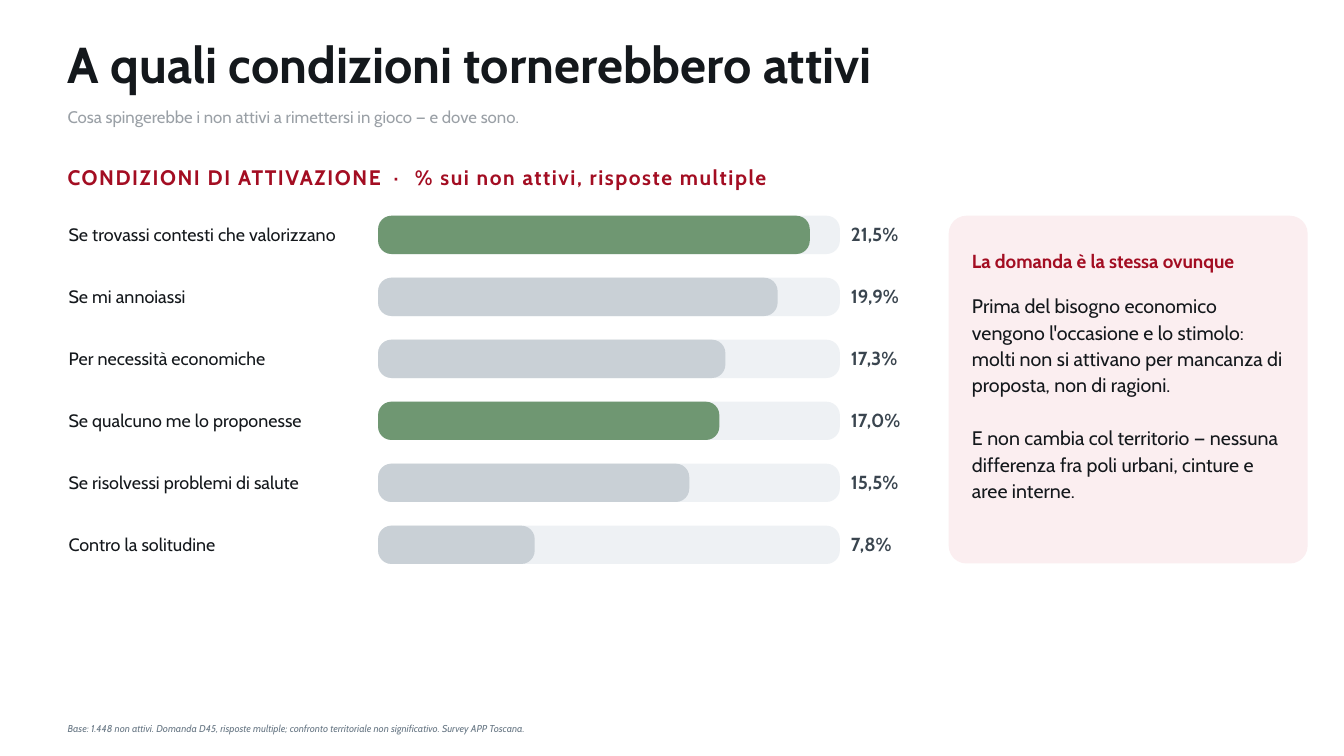
from pptx import Presentation
from pptx.dml.color import RGBColor
from pptx.enum.shapes import MSO_SHAPE
from pptx.enum.text import MSO_ANCHOR, MSO_AUTO_SIZE, PP_ALIGN
from pptx.util import Inches, Pt

FONT = "Cabin"
INK, RED, SLATE = "14181C", "A30D22", "3A454F"
GREEN, GREY, TRACK = "6F9772", "C9D0D6", "EEF1F4"

BAR_X, BAR_W, BAR_H = 3.75, 4.58, 0.38
FIRST_Y, ROW_STEP = 2.14, 0.615
SCALE_MAX = 23

CONDITIONS = [
    ("Se trovassi contesti che valorizzano", 21.5, GREEN),
    ("Se mi annoiassi", 19.9, GREY),
    ("Per necessità economiche", 17.3, GREY),
    ("Se qualcuno me lo proponesse", 17.0, GREEN),
    ("Se risolvessi problemi di salute", 15.5, GREY),
    ("Contro la solitudine", 7.8, GREY),
]


def rgb(value):
    return RGBColor.from_string(value)


def prepare_frame(shape, anchor=MSO_ANCHOR.MIDDLE):
    tf = shape.text_frame
    tf.word_wrap = True
    tf.auto_size = MSO_AUTO_SIZE.NONE
    tf.vertical_anchor = anchor
    tf.margin_left = tf.margin_top = tf.margin_right = tf.margin_bottom = 0
    return tf


def add_run(p, text, size, color, bold=False, italic=False, tracking=None):
    """Append a run; tracking is the letter spacing in points."""
    r = p.add_run()
    r.text = text
    r.font.name = FONT
    r.font.size = Pt(size)
    r.font.bold = bold
    r.font.italic = italic
    r.font.color.rgb = rgb(color)
    if tracking:
        r._r.get_or_add_rPr().set("spc", str(round(tracking * 100)))


def add_box(s, x, y, w, h, anchor=MSO_ANCHOR.MIDDLE):
    box = s.shapes.add_textbox(Inches(x), Inches(y), Inches(w), Inches(h))
    return prepare_frame(box, anchor)


def add_line(s, x, y, w, h, text, size, color, spacing=None, **style):
    p = add_box(s, x, y, w, h).paragraphs[0]
    p.line_spacing = spacing
    add_run(p, text, size, color, **style)


def add_rounded(s, x, y, w, h, color, corner):
    sp = s.shapes.add_shape(MSO_SHAPE.ROUNDED_RECTANGLE,
                            Inches(x), Inches(y), Inches(w), Inches(h))
    sp.adjustments[0] = corner
    sp.shadow.inherit = False
    sp.fill.solid()
    sp.fill.fore_color.rgb = rgb(color)
    sp.line.fill.background()


def add_title(s, text):
    title = s.shapes.title
    title.left, title.top = Inches(0.67), Inches(0.36)
    title.width, title.height = Inches(12), Inches(0.54)
    p = prepare_frame(title).paragraphs[0]
    p.alignment = PP_ALIGN.LEFT
    add_run(p, text, 36, INK, bold=True)


def add_section_heading(s):
    p = add_box(s, 0.67, 1.53, 9.49, 0.45).paragraphs[0]
    for text, tracking in [("CONDIZIONI DI ATTIVAZIONE", 1.1), (" · ", 4.2),
                           ("% sui non attivi, risposte multiple", 1.1)]:
        add_run(p, text, 15, RED, bold=True, tracking=tracking)


def add_condition(s, y, label, value, color):
    add_line(s, 0.68, y + 0.08, 3, 0.21, label, 12.8, INK)
    add_rounded(s, BAR_X, y, BAR_W, BAR_H, TRACK, 0.35)
    add_rounded(s, BAR_X, y, BAR_W * value / SCALE_MAX, BAR_H, color, 0.35)
    percent = f"{value:.1f}%".replace(".", ",")
    add_line(s, 8.44, y + 0.07, 0.75, 0.23, percent, 13.5, SLATE, bold=True)


def add_insight(s, heading, paragraphs):
    add_rounded(s, 9.41, FIRST_Y, 3.56, 3.45, "FBEEF0", 0.051)
    add_line(s, 9.64, 2.36, 3.15, 0.45, heading, 13.5, RED, bold=True)
    tf = add_box(s, 9.64, 2.89, 3.15, 2.55, MSO_ANCHOR.TOP)
    for i, text in enumerate(paragraphs):
        p = tf.add_paragraph() if i else tf.paragraphs[0]
        p.line_spacing = 1.12
        if i:
            p.space_before = Pt(19)
        add_run(p, text, 14, INK)


def main():
    prs = Presentation()
    prs.slide_width, prs.slide_height = Inches(13.33), Inches(7.5)
    s = prs.slides.add_slide(prs.slide_layouts[5])

    add_title(s, "A quali condizioni tornerebbero attivi")
    add_line(s, 0.67, 0.98, 12, 0.34,
             "Cosa spingerebbe i non attivi a rimettersi in gioco — e dove sono.",
             12, "9AA0A6", spacing=1.05)
    add_section_heading(s)
    for i, condition in enumerate(CONDITIONS):
        add_condition(s, FIRST_Y + i * ROW_STEP, *condition)
    add_insight(s, "La domanda è la stessa ovunque", [
        "Prima del bisogno economico vengono l'occasione e lo stimolo: "
        "molti non si attivano per mancanza di proposta, non di ragioni.",
        "E non cambia col territorio — nessuna differenza fra poli urbani, "
        "cinture e aree interne.",
    ])
    add_line(s, 0.67, 7.05, 12, 0.34,
             "Base: 1.448 non attivi. Domanda D45, risposte multiple; confronto "
             "territoriale non significativo. Survey APP Toscana.",
             7.1, "6B7A87", spacing=Pt(9), italic=True)
    prs.save("out.pptx")


if __name__ == "__main__":
    main()
